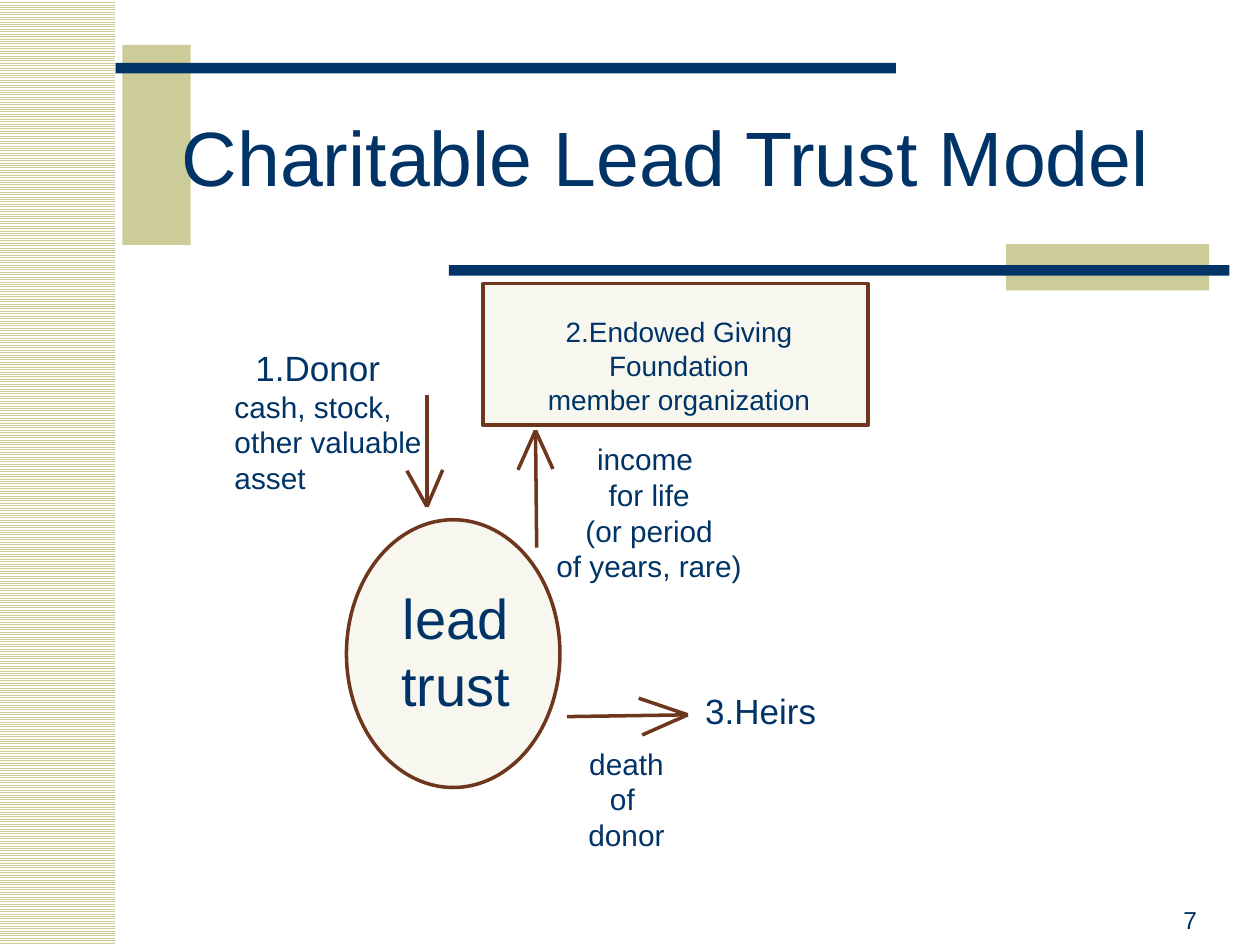
from lxml.etree import SubElement as Sub
from pptx import Presentation
from pptx.dml.color import RGBColor as Rgb
from pptx.enum.dml import MSO_PATTERN as Pat
from pptx.enum.shapes import MSO_CONNECTOR as Conn, MSO_SHAPE as Form
from pptx.enum.text import MSO_ANCHOR as Anchor, PP_ALIGN as Align
from pptx.oxml.ns import qn
from pptx.util import Pt

HUES = {"navy": "003366", "sand": "CCCC99", "brown": "6E361D", "white": "FFFFFF"}


def hue(name):
    return Rgb.from_string(HUES[name])


def write(frame, lines, size, align=Align.LEFT, indent=0):
    for i, line in enumerate(lines):
        para = frame.paragraphs[0] if i == 0 else frame.add_paragraph()
        para.alignment = align
        if indent:
            props = para._p.get_or_add_pPr()
            props.set("marL", str(Pt(indent)))
            props.set("indent", "0")
        run = para.add_run()
        run.text = line
        run.font.size = Pt(size)
        run.font.name = "Arial"
        run.font.color.rgb = hue("navy")


def add_block(slide, box, color, form=Form.RECTANGLE):
    block = slide.shapes.add_shape(form, *map(Pt, box))
    block.shadow.inherit = False
    block.fill.solid()
    block.fill.fore_color.rgb = hue(color)
    block.line.fill.background()
    return block


def add_node(slide, box, form):
    """Add a brown outline with a faint, see-through sand fill."""
    node = add_block(slide, box, "sand", form)
    tint = node._element.spPr.find(qn("a:solidFill"))[0]
    Sub(tint, qn("a:alpha"), val="15000")
    node.line.color.rgb = hue("brown")
    node.line.width = Pt(2)


def add_stripes(slide, box):
    fill = add_block(slide, box, "sand").fill
    fill.patterned()
    fill.pattern = Pat.LIGHT_HORIZONTAL
    fill.fore_color.rgb = hue("sand")
    fill.back_color.rgb = hue("white")


def add_line(slide, start, end):
    line = slide.shapes.add_connector(Conn.STRAIGHT, *map(Pt, start + end))
    line.line.color.rgb = hue("brown")
    line.line.width = Pt(2)
    Sub(line._element.spPr, qn("a:effectLst"))


def add_arrow(slide, tail, tip, barbs):
    """Draw a shaft and the two long open barbs of its head."""
    for end in (tail, *barbs):
        add_line(slide, end, tip)


def add_label(slide, box, lines, size, align=Align.LEFT, indent=8):
    frame = slide.shapes.add_textbox(*map(Pt, box)).text_frame
    frame.word_wrap = True
    frame.margin_left = frame.margin_right = 0
    frame.margin_top = frame.margin_bottom = 0
    write(frame, lines, size, align, indent)
    return frame


def set_title(slide, box, text):
    title = slide.shapes.title
    title.left, title.top, title.width, title.height = map(Pt, box)
    frame = title.text_frame
    frame.vertical_anchor = Anchor.MIDDLE
    write(frame, [text], 44, Align.CENTER)
    frame.paragraphs[0].line_spacing = 0.85


def add_decor(slide):
    add_block(slide, (70, 25.7, 39, 114.3), "sand")
    add_block(slide, (66, 36, 446, 6), "navy")
    add_block(slide, (575, 139.5, 116, 26.5), "sand")
    add_block(slide, (256.5, 151.5, 446, 6), "navy")
    add_stripes(slide, (0, 0, 66, 540))


def main():
    deck = Presentation()
    deck.slide_width, deck.slide_height = Pt(720), Pt(540)
    slide = deck.slides.add_slide(deck.slide_layouts[5])
    mid = Align.CENTER

    add_decor(slide)
    # Bring the title in front of the decoration.
    slide.shapes._spTree.append(slide.shapes.title._element)
    set_title(slide, (72, 48, 617, 90), "Charitable Lead Trust Model")

    add_node(slide, (198, 297, 122, 153), Form.OVAL)
    add_node(slide, (276, 162, 220, 81), Form.RECTANGLE)

    add_arrow(slide, (244, 226), (244, 289.5), [(232.5, 269), (253, 268.5)])
    add_arrow(slide, (306.7, 313), (306, 246), [(296, 268.5), (316, 268)])
    add_arrow(slide, (324, 409.5), (393, 408.5), [(367, 420), (365, 399)])

    add_label(slide, (138, 198, 96, 24), ["1.Donor"], 20)
    add_label(slide, (126, 222, 126, 62), ["cash, stock, other valuable asset"], 17)
    add_label(slide, (290, 180, 188, 58),
              ["2.Endowed Giving Foundation", "member organization"], 16, mid)
    add_label(slide, (306, 252, 122, 84),
              ["income ", "for life", "(or period", "of years, rare)"], 17, mid)
    add_label(slide, (312, 426, 84, 62), ["death", "of ", "donor"], 17, mid)
    add_label(slide, (222, 333.5, 77, 78), ["lead", "trust"], 32, mid, 0)
    add_label(slide, (403, 394, 72, 25), ["3.Heirs"], 20, indent=0)
    number = add_label(slide, (519, 502, 165, 32), ["7"], 14, Align.RIGHT, 0)
    number.vertical_anchor = Anchor.BOTTOM

    deck.save("out.pptx")


if __name__ == "__main__":
    main()
